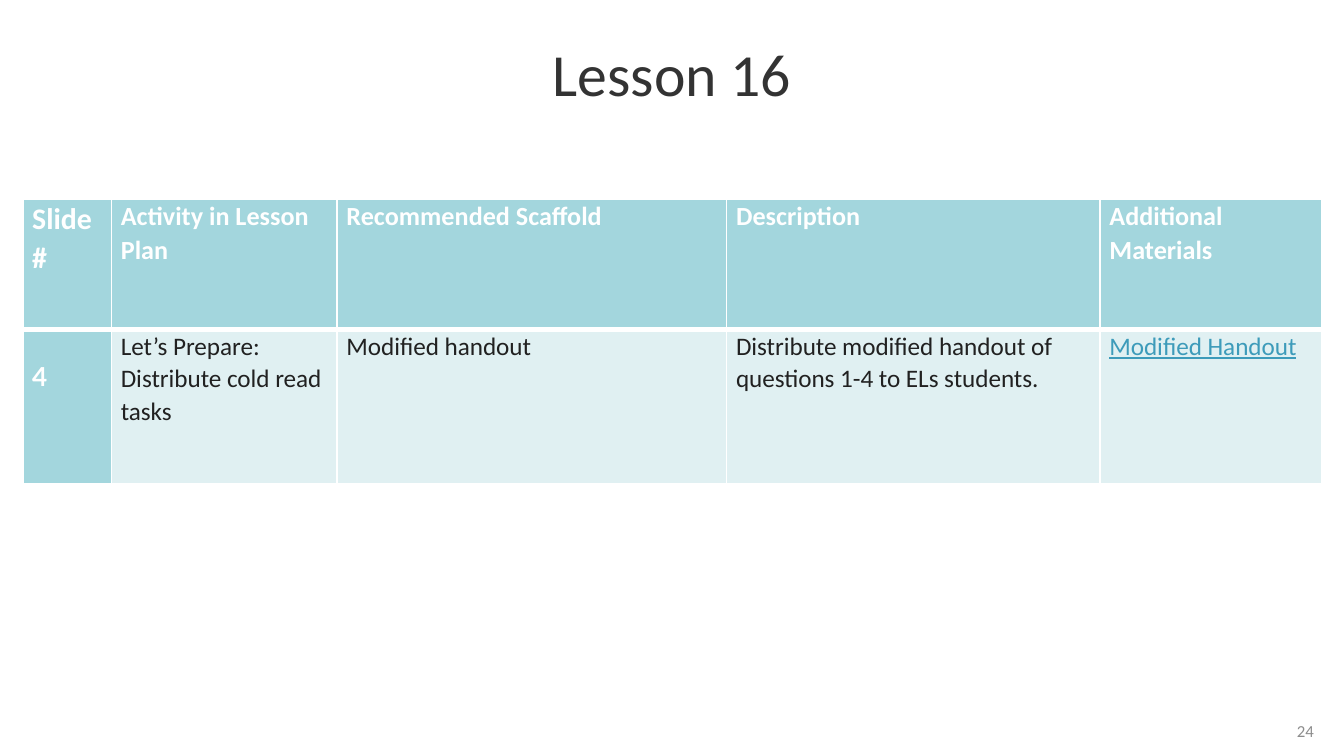
from lxml import etree
from pptx import Presentation
from pptx import util as u
from pptx.dml.color import RGBColor
from pptx.enum import text
from pptx.oxml.ns import qn

COLORS = {"title": "333333", "number": "8D8D8D", "white": "FFFFFF",
          "teal": "A3D6DD", "pale": "E0F0F2", "body": "212121", "link": "3D9BBA"}
WIDTH = u.Inches(10)
HEIGHT = WIDTH * 9 // 16
COLUMN_SHARES = [0.66, 1.68, 2.9, 2.78, 1.65]
ROW_SHARES = [0.97, 1.15]
HEADINGS = ["Slide #", "Activity in Lesson Plan", "Recommended Scaffold",
            "Description", "Additional Materials"]
ACTIVITY = ["4", "Let’s Prepare: Distribute cold read tasks", "Modified handout",
            "Distribute modified handout of questions 1-4 to ELs students.",
            "Modified Handout"]


def percent_box(left, top, width, height):
    """Turn percentages of the slide into a box in slide units."""
    return [int(percent * side / 100) for percent, side in
            zip((left, top, width, height), (WIDTH, HEIGHT, WIDTH, HEIGHT))]


def style(paragraph, size, color, spacing=1.0, bold=False, face="Calibri"):
    paragraph.line_spacing = spacing
    for run in paragraph.runs:
        run.font.size = u.Pt(size)
        run.font.name = face
        run.font.bold = bold
        run.font.color.rgb = RGBColor.from_string(COLORS[color])


def add_label(slide, box, words, align, size, color, spacing=1.0):
    frame = slide.shapes.add_textbox(*box).text_frame
    frame.word_wrap = True
    frame.vertical_anchor = text.MSO_ANCHOR.MIDDLE
    frame.text = words
    frame.paragraphs[0].alignment = align
    style(frame.paragraphs[0], size, color, spacing)


def set_borders(cell, bottom):
    properties = cell._tc.get_or_add_tcPr()
    for index, (side, points) in enumerate(
            [("lnL", 1), ("lnR", 1), ("lnT", 1), ("lnB", bottom)]):
        line = etree.Element(qn(f"a:{side}"), w=str(u.Pt(points)))
        fill = etree.SubElement(line, qn("a:solidFill"))
        etree.SubElement(fill, qn("a:srgbClr"), val=COLORS["white"])
        properties.insert(index, line)


def fill_cell(cell, words, fill, bottom):
    cell.margin_left = cell.margin_right = u.Inches(0.07)
    cell.margin_top = cell.margin_bottom = 0
    cell.fill.solid()
    cell.fill.fore_color.rgb = RGBColor.from_string(COLORS[fill])
    set_borders(cell, bottom)
    cell.text_frame.text = words
    return cell.text_frame.paragraphs[0]


def add_scaffold_table(slide, box):
    left, top, width, height = box
    table = slide.shapes.add_table(2, len(HEADINGS), left, top, width, height).table
    for column, share in zip(table.columns, COLUMN_SHARES):
        column.width = int(width * share / sum(COLUMN_SHARES))
    for row, share in zip(table.rows, ROW_SHARES):
        row.height = int(height * share / sum(ROW_SHARES))

    # Header row
    for index, heading in enumerate(HEADINGS):
        paragraph = fill_cell(table.cell(0, index), heading, "teal", 3)
        style(paragraph, 14 if index else 16, "white", 1.06, bold=True)

    # Activity row: slide number, details, handout link
    for index, words in enumerate(ACTIVITY):
        paragraph = fill_cell(table.cell(1, index), words, "pale" if index else "teal", 1)
        if index == 0:
            style(paragraph, 14, "white", 2.0, bold=True, face="Lato")
        else:
            style(paragraph, 13.5, "body", 1.06)
    handout = table.cell(1, len(ACTIVITY) - 1).text_frame.paragraphs[0]
    style(handout, 13.5, "link", 1.06)
    handout.runs[0].font.underline = True


def build_lesson_slide(deck):
    slide = deck.slides.add_slide(deck.slide_layouts[6])
    # Page number
    add_label(slide, percent_box(74.35, 93.35, 24.4, 6.75), "24",
              text.PP_ALIGN.RIGHT, 9, "number")
    # Title
    add_label(slide, percent_box(0, 0, 100, 20.45), "Lesson 16",
              text.PP_ALIGN.CENTER, 32, "title", 0.9)
    # Scaffold table
    add_scaffold_table(slide, percent_box(1.7, 26.35, 96.65, 37.7))


def main():
    deck = Presentation()
    deck.slide_width, deck.slide_height = WIDTH, HEIGHT
    build_lesson_slide(deck)
    deck.save("out.pptx")


if __name__ == "__main__":
    main()
